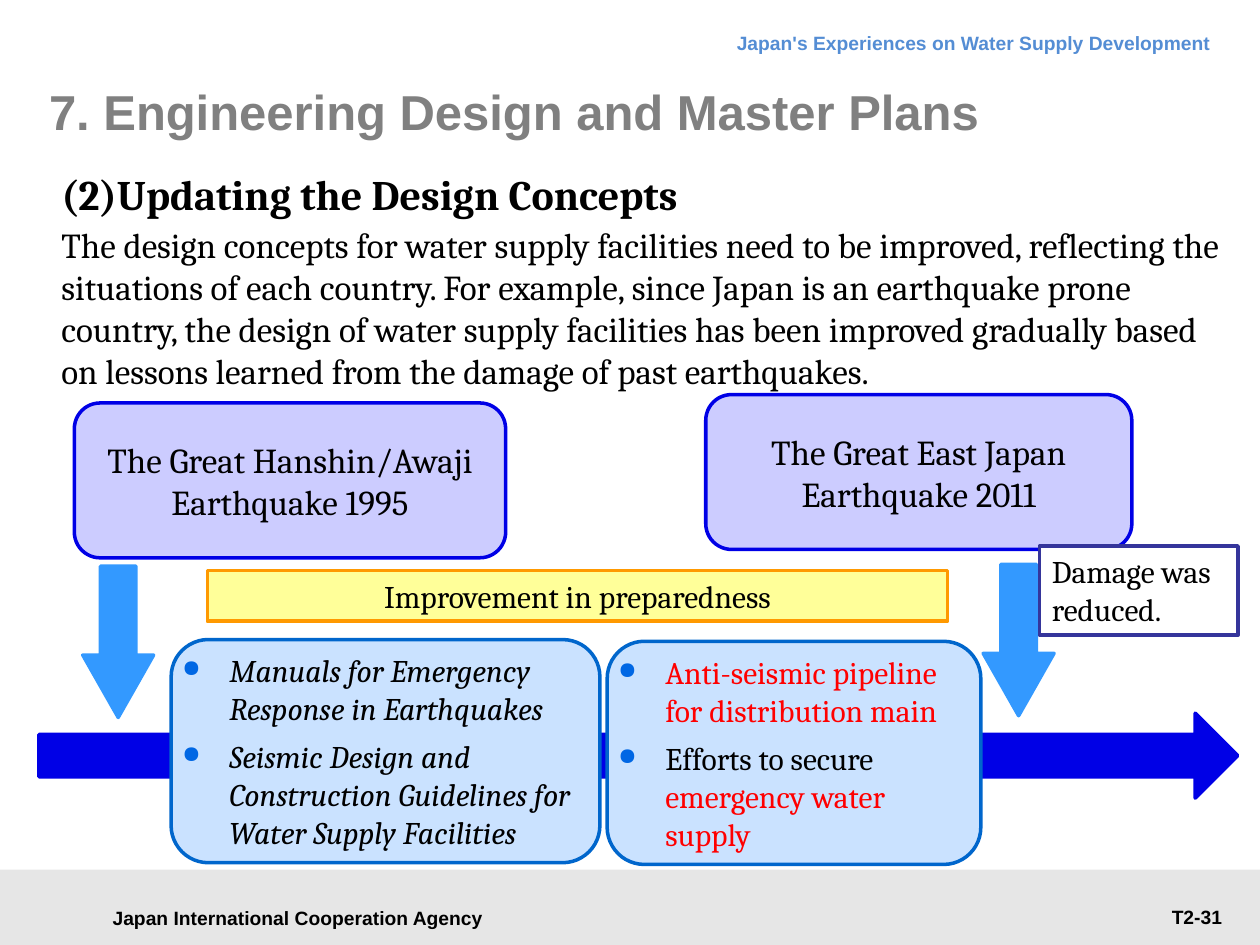
from lxml.etree import SubElement
from pptx import Presentation
from pptx.dml.color import RGBColor
from pptx.enum.shapes import MSO_SHAPE
from pptx.enum.text import MSO_ANCHOR, MSO_AUTO_SIZE, PP_ALIGN
from pptx.oxml.ns import qn
from pptx.util import Pt

BLACK = RGBColor(0, 0, 0)
WHITE = RGBColor(255, 255, 255)
RED = RGBColor(255, 0, 0)
GREY = RGBColor(0x80, 0x80, 0x80)
FOOTER_GREY = RGBColor(0xE6, 0xE6, 0xE6)
HEADER_BLUE = RGBColor(0x54, 0x8D, 0xD4)
DEEP_BLUE = RGBColor(0, 0, 0xE6)
LAVENDER = RGBColor(0xCC, 0xCC, 0xFF)
ARROW_BLUE = RGBColor(0x33, 0x99, 0xFF)
INDIGO = RGBColor(0x35, 0x35, 0x9B)
YELLOW = RGBColor(0xFF, 0xFF, 0x99)
ORANGE = RGBColor(0xFF, 0x99, 0)
PALE_BLUE = RGBColor(0xCA, 0xE2, 0xFF)
LIST_BLUE = RGBColor(0, 0x66, 0xCC)
BULLET_BLUE = "0067E4"


def add_box(kind, left, top, width, height, fill=None, line=None):
    place = Pt(left), Pt(top), Pt(width), Pt(height)
    if kind is None:
        box = page.shapes.add_textbox(*place)
    else:
        box = page.shapes.add_shape(kind, *place)
        box.shadow.inherit = False
        box.fill.solid()
        box.fill.fore_color.rgb = fill
        if line is None:
            box.line.fill.background()
        else:
            box.line.color.rgb = line
            box.line.width = Pt(2)
    box.text_frame.word_wrap = True
    return box


def write(para, text, size, font="Cambria", color=BLACK, bold=False,
          italic=False, align=PP_ALIGN.LEFT):
    para.alignment = align
    span = para.add_run()
    span.text = text
    span.font.name = font
    span.font.size = Pt(size)
    span.font.bold = bold
    span.font.italic = italic
    span.font.color.rgb = color


deck = Presentation()
deck.slide_width, deck.slide_height = Pt(720), Pt(540)
page = deck.slides.add_slide(deck.slide_layouts[5])

title = page.shapes.title
title.left, title.top, title.width, title.height = Pt(28), Pt(34.5), Pt(646.5), Pt(57.5)
frame = title.text_frame
frame.auto_size = MSO_AUTO_SIZE.NONE
frame.vertical_anchor = MSO_ANCHOR.MIDDLE
frame.margin_left = frame.margin_top = frame.margin_right = frame.margin_bottom = 0
write(frame.paragraphs[0], "7. Engineering Design and Master Plans", 28, "Arial", GREY, bold=True)

add_box(MSO_SHAPE.RECTANGLE, 0, 497, 720, 43, FOOTER_GREY)

agency = add_box(None, 51, 512.5, 238.5, 24.5)
agency.text_frame.vertical_anchor = MSO_ANCHOR.MIDDLE
write(agency.text_frame.paragraphs[0], "Japan International Cooperation Agency", 11, "Arial",
      bold=True, align=PP_ALIGN.CENTER)

header = add_box(None, 196, 9.5, 503, 27.5)
header.text_frame.paragraphs[0].line_spacing = Pt(18)
write(header.text_frame.paragraphs[0], "Japan's Experiences on Water Supply Development", 11,
      "Arial", HEADER_BLUE, bold=True, align=PP_ALIGN.RIGHT)

number = add_box(None, 592.5, 514, 113, 21)
write(number.text_frame.paragraphs[0], "T2-31", 11, "Arial", bold=True, align=PP_ALIGN.RIGHT)

heading = add_box(None, 28, 92.5, 379.5, 36)
heading.text_frame.word_wrap = False
write(heading.text_frame.paragraphs[0], "(2)Updating the Design Concepts", 24, bold=True)

summary = add_box(None, 28, 124, 682, 104.5)
write(summary.text_frame.paragraphs[0],
      "The design concepts for water supply facilities need to be improved, reflecting the "
      "situations of each country. For example, since Japan is an earthquake prone country, "
      "the design of water supply facilities has been improved gradually based on lessons "
      "learned from the damage of past earthquakes.", 20)

timeline = add_box(MSO_SHAPE.DOWN_ARROW, 340.5, 89.3, 48.5, 685, DEEP_BLUE, DEEP_BLUE)
timeline.rotation = 270

earthquakes = [
    (42.5, 230.3, 246.5, "The Great Hanshin/Awaji Earthquake 1995"),
    (403.3, 225.5, 243.5, "The Great East Japan Earthquake 2011"),
]
for left, top, width, name in earthquakes:
    event = add_box(MSO_SHAPE.ROUNDED_RECTANGLE, left, top, width, 88.5, LAVENDER, DEEP_BLUE)
    event.text_frame.vertical_anchor = MSO_ANCHOR.MIDDLE
    write(event.text_frame.paragraphs[0], name, 20, align=PP_ALIGN.CENTER)

for left, top in [(24.3, 346.5), (538.8, 345.5)]:
    arrow = add_box(MSO_SHAPE.RIGHT_ARROW, left, top, 86.5, 40.5, ARROW_BLUE, ARROW_BLUE)
    arrow.adjustments[1] = 0.88
    arrow.rotation = 90

damage = add_box(MSO_SHAPE.RECTANGLE, 594, 312, 113.5, 51, WHITE, INDIGO)
damage.text_frame.vertical_anchor = MSO_ANCHOR.TOP
write(damage.text_frame.paragraphs[0], "Damage was reduced.", 18)

preparedness = add_box(MSO_SHAPE.RECTANGLE, 118.5, 326, 423, 29, YELLOW, ORANGE)
preparedness.text_frame.vertical_anchor = MSO_ANCHOR.TOP
write(preparedness.text_frame.paragraphs[0], "Improvement in preparedness", 18,
      align=PP_ALIGN.CENTER)

measures = [
    (347, 366.5, 213.5, False, [
        [("Anti-seismic pipeline for distribution main", RED)],
        [("Efforts to secure ", BLACK), ("emergency water supply", RED)],
    ]),
    (97.8, 365.5, 245, True, [
        [("Manuals for Emergency Response in Earthquakes", BLACK)],
        [("Seismic Design and Construction Guidelines for Water Supply Facilities", BLACK)],
    ]),
]
for left, top, width, italic, items in measures:
    box = add_box(MSO_SHAPE.ROUNDED_RECTANGLE, left, top, width, 127.5, PALE_BLUE, LIST_BLUE)
    frame = box.text_frame
    frame.vertical_anchor = MSO_ANCHOR.MIDDLE
    frame.margin_left = frame.margin_top = frame.margin_right = frame.margin_bottom = 0
    for index, item in enumerate(items):
        para = frame.add_paragraph() if index else frame.paragraphs[0]
        para.space_after = Pt(6)
        properties = para._p.get_or_add_pPr()
        properties.set("marL", str(Pt(27)))
        properties.set("indent", str(Pt(-27)))
        bullet_color = SubElement(properties, qn("a:buClr"))
        SubElement(bullet_color, qn("a:srgbClr"), val=BULLET_BLUE)
        SubElement(properties, qn("a:buSzPct"), val="75000")
        SubElement(properties, qn("a:buChar"), char="●")
        for text, color in item:
            write(para, text, 18, color=color, italic=italic)

deck.save("out.pptx")
